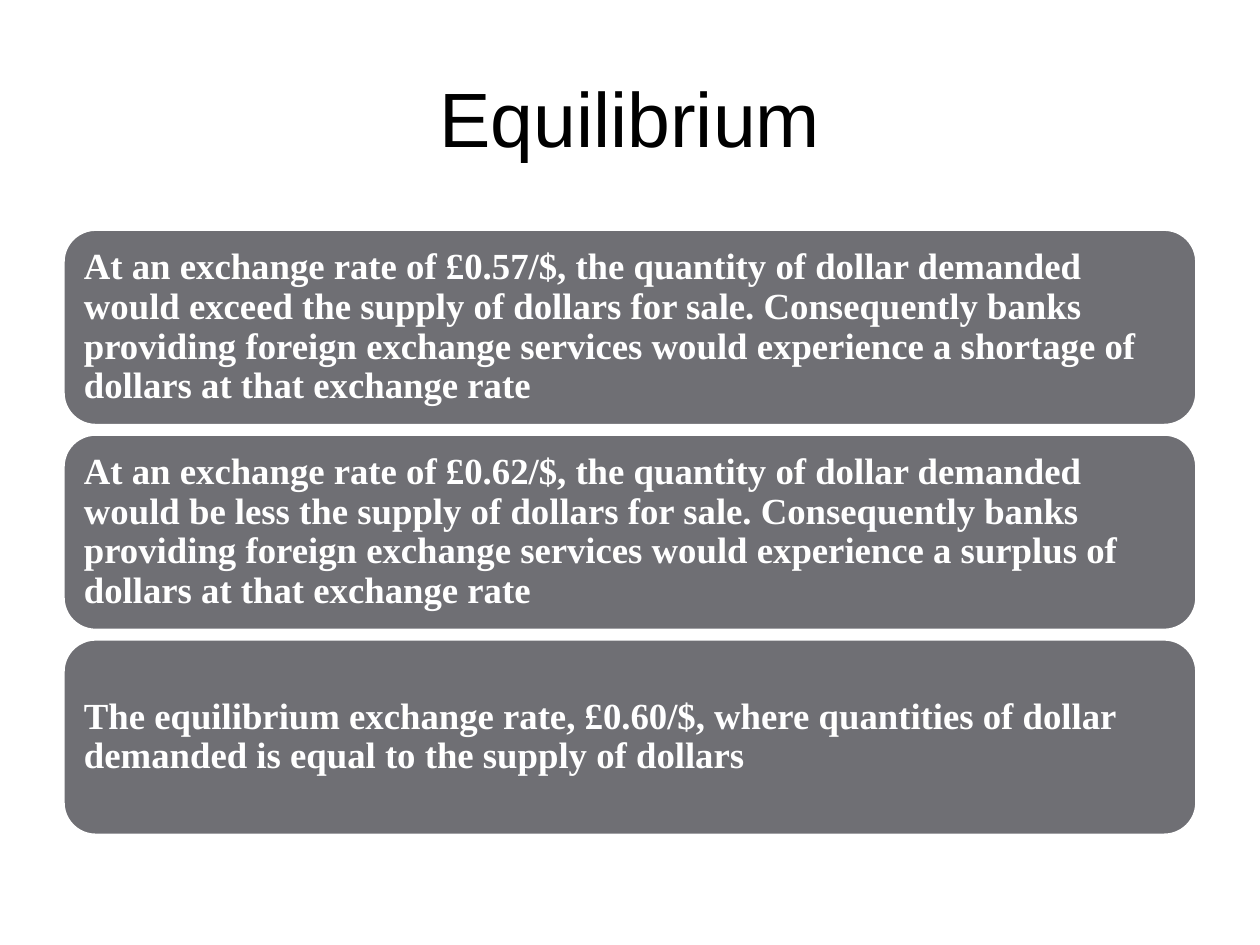
"""Build the Equilibrium slide: a title above three rounded panels."""
from pptx import Presentation
from pptx.dml.color import RGBColor
from pptx.enum.shapes import MSO_SHAPE
from pptx.enum.text import MSO_ANCHOR, PP_ALIGN
from pptx.util import Cm, Pt

ROUND = MSO_SHAPE.ROUNDED_RECTANGLE
MIDDLE = MSO_ANCHOR.MIDDLE
LEFT, CENTER = PP_ALIGN.LEFT, PP_ALIGN.CENTER
EDGE, WIDTH = Cm(1.27), Cm(22.86)
TOP, HIGH, STEP = Cm(4.62), Cm(3.96), Cm(4.13)
INSET = Cm(0.23)

NOTES = [
    "At an exchange rate of £0.57/$, the quantity of dollar demanded would "
    "exceed the supply of dollars for sale. Consequently banks providing "
    "foreign exchange services would experience a shortage of dollars at "
    "that exchange rate",
    "At an exchange rate of £0.62/$, the quantity of dollar demanded would "
    "be less the supply of dollars for sale. Consequently banks providing "
    "foreign exchange services would experience a surplus of dollars at "
    "that exchange rate",
    "The equilibrium exchange rate, £0.60/$, where quantities of dollar "
    "demanded is equal to the supply of dollars",
]


def paint(target, shade):
    target.rgb = RGBColor.from_string(shade)


def style(para, text, face, size, shade, bold, align):
    para.text = text
    para.alignment = align
    font = para.font
    font.name, font.size, font.bold = face, Pt(size), bold
    paint(font.color, shade)


deck = Presentation()
deck.slide_width, deck.slide_height = Cm(25.4), Cm(19.05)
slide = deck.slides.add_slide(deck.slide_layouts[5])

title = slide.shapes.title
title.left, title.top = EDGE, Cm(0.76)
title.width, title.height = WIDTH, Cm(3.18)
title.text_frame.vertical_anchor = MIDDLE
style(title.text_frame.paragraphs[0], "Equilibrium", "Arial", 44, "000000",
      False, CENTER)

for row, note in enumerate(NOTES):
    panel = slide.shapes.add_shape(ROUND, EDGE, TOP + row * STEP, WIDTH, HIGH)
    panel.shadow.inherit = False
    panel.fill.solid()
    paint(panel.fill.fore_color, "6F6F74")
    paint(panel.line.color, "FFFFFF")
    panel.line.width = Pt(2)
    frame = panel.text_frame
    frame.word_wrap = True
    frame.vertical_anchor = MIDDLE
    frame.margin_left = frame.margin_right = INSET
    frame.margin_top = frame.margin_bottom = INSET
    para = frame.paragraphs[0]
    para.line_spacing = 0.9
    style(para, note, "Times New Roman", 21, "FFFFFF", True, LEFT)

deck.save("out.pptx")
